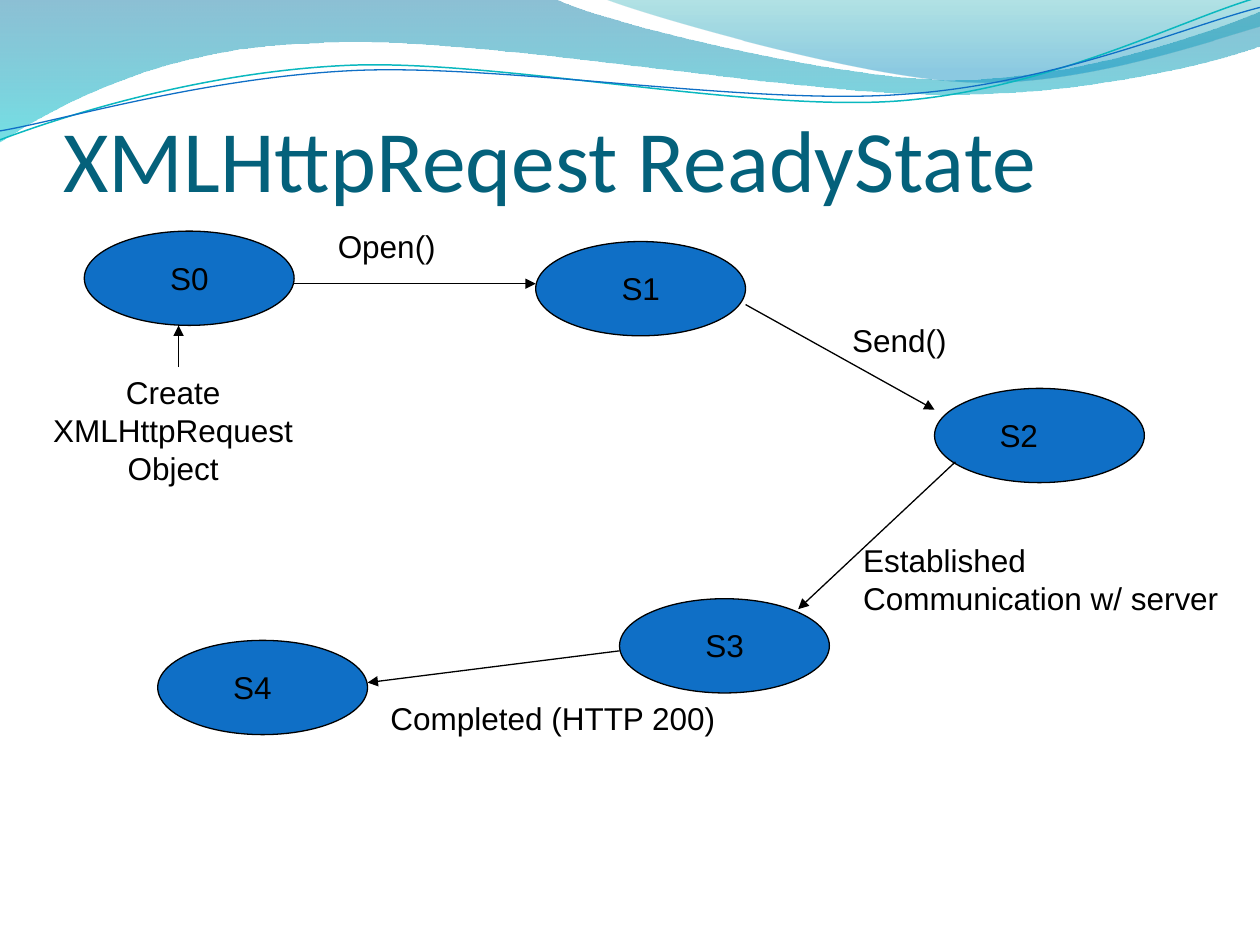
"""Build the XMLHttpRequest ready state diagram slide."""
from lxml.etree import SubElement as Sub
from pptx import Presentation as Deck
from pptx.dml.color import RGBColor as Rgb
from pptx.enum.shapes import MSO_CONNECTOR as Link, MSO_SHAPE as Kind
from pptx.enum.text import MSO_ANCHOR as Anchor, MSO_AUTO_SIZE as Fit, PP_ALIGN as Align
from pptx.oxml.ns import qn
from pptx.util import Cm, Pt

INK = {"blue": "0F6FC6", "teal": "0AB8BF", "title": "04617B", "black": "000000"}
BODY = {"name": "Arial", "size": Pt(18)}
HEAD = {"name": "Calibri", "size": Pt(50)}
FLUSH = {"margin_left": 0, "margin_right": 0, "margin_bottom": 0}
GROW = {"auto_size": Fit.SHAPE_TO_FIT_TEXT}
OVAL = (4.23, 1.9)
TILT = -2.7

BANDS = [
    ([(0, "0074A1", 45), (1, "00C6CF", 55)],
     [(0, 0), (11.18, -0.03),
      (12.09, 0.43, 16.87, 1.6, 19.25, 1.6), (21.67, 1.6, 24.33, 0.66, 25.4, 0.23),
      (25.43, 0.91),
      (24.97, 1.12, 22.1, 1.93, 18.95, 1.9), (15.8, 1.9, 9.7, 0.71, 6.53, 0.86),
      (3.28, 0.91, 1.17, 2.11, -0.03, 2.87), (0, 0)]),
    ([(0, "00A1A9", 30), (0.8, "008BBF", 45)],
     [(12.17, -0.03), (12.93, 0.28, 17.32, 1.57, 19.53, 1.65),
      (21.74, 1.75, 24.41, 0.81, 25.4, 0.53), (25.4, 0), (12.17, -0.03)]),
]
CURVES = [
    ("teal", 0.85,
     [(-0.05, 2.22), (1.19, 1.82, 4.02, 1.04, 7.05, 1.05),
      (10.05, 1.07, 15.02, 2.37, 18.08, 2.29), (21.13, 2.2, 23.87, 0.91, 25.41, 0.55)]),
    ("blue", 0.75,
     [(-0.04, 2.04), (1.16, 1.9, 4.18, 1.15, 7.2, 1.16),
      (10.25, 1.18, 15.13, 2.25, 18.19, 2.16), (21.21, 2.1, 23.93, 1.06, 25.45, 0.75)]),
]
STATES = [
    ("S0", 1.7, 4.66, 1.48), ("S1", 10.8, 4.87, 1.48), ("S2", 18.84, 7.83, 1.06),
    ("S3", 12.49, 12.07, 1.48), ("S4", 3.18, 12.91, 1.27),
]
ARROWS = [
    (5.93, 5.72, 10.8, 5.72), (15.03, 6.14, 18.84, 8.26), (19.26, 9.31, 16.09, 12.28),
    (12.49, 13.12, 7.41, 13.76), (3.6, 7.4, 3.6, 6.56),
]
LABELS = [
    ("Create XMLHttpRequest Object", (0.63, 7.4, 5.72, 2.54), Align.CENTER, True),
    ("Open()", (6.56, 4.45, 5.93, 1.02), Align.LEFT, True),
    ("Send()", (16.93, 6.35, 5.93, 1.02), Align.LEFT, True),
    ("Established Communication w/ server", (17.15, 10.79, 8.26, 1.78), Align.LEFT, True),
    ("Completed (HTTP 200)", (7.62, 13.97, 7.09, 1.02), Align.LEFT, False),
]


def cms(nums):
    return [Cm(n) for n in nums]


def apply(item, vals):
    for key, val in vals.items():
        setattr(item, key, val)


def pen(line, ink, width=0.75):
    line.color.rgb = Rgb.from_string(INK[ink])
    line.width = Pt(width)


def outline(shapes, route, close):
    pts = [cms(leg[i:i + 2]) for leg in route for i in range(0, len(leg), 2)]
    draft = shapes.build_freeform(*pts[0])
    draft.add_line_segments(pts[1:], close=close)
    form = draft.convert_to_shape()
    form.shadow.inherit = False
    lines = iter(form._element.spPr.findall(".//" + qn("a:lnTo")))
    for leg in route[1:]:
        first = next(lines)
        if len(leg) == 6:
            first.tag = qn("a:cubicBezTo")
            for _ in range(2):
                extra = next(lines)
                first.append(extra[0])
                extra.getparent().remove(extra)
    return form


def band(shapes, stops, route):
    form = outline(shapes, route, True)
    form.line.fill.background()
    form.fill.gradient()
    form.fill.gradient_angle = 270
    for stop, (pos, ink, _) in zip(form.fill.gradient_stops, stops):
        stop.position = pos
        stop.color.rgb = Rgb.from_string(ink)
    tones = form._element.spPr.findall(".//" + qn("a:srgbClr"))
    for tone, (_, _, alpha) in zip(tones, stops):
        Sub(tone, qn("a:alpha"), val=str(alpha * 1000))


def curve(shapes, ink, width, route):
    form = outline(shapes, route, False)
    form.rotation = TILT
    form.fill.background()
    pen(form.line, ink, width)


def write(shapes, text, spot, font, ink="black", align=Align.LEFT, **frame):
    area = shapes.add_textbox(*cms(spot)).text_frame
    apply(area, {"word_wrap": True, **frame})
    para = area.paragraphs[0]
    para.alignment = align
    run = para.add_run()
    run.text = text
    apply(run.font, font)
    run.font.color.rgb = Rgb.from_string(INK[ink])


def oval(shapes, x, y):
    form = shapes.add_shape(Kind.OVAL, *cms((x, y, *OVAL)))
    form.shadow.inherit = False
    form.fill.solid()
    form.fill.fore_color.rgb = Rgb.from_string(INK["blue"])
    pen(form.line, "black")


def arrow(shapes, ends):
    link = shapes.add_connector(Link.STRAIGHT, *cms(ends))
    pen(link.line, "black")
    props = link._element.spPr
    Sub(props.find(qn("a:ln")), qn("a:tailEnd"), type="triangle")
    Sub(props, qn("a:effectLst"))


def main():
    deck = Deck()
    deck.slide_width, deck.slide_height = cms((25.4, 19.05))
    shapes = deck.slides.add_slide(deck.slide_layouts[6]).shapes
    for stops, route in BANDS:
        band(shapes, stops, route)
    for ink, width, route in CURVES:
        curve(shapes, ink, width, route)
    write(shapes, "XMLHttpReqest ReadyState", (1.28, 1.95, 22.86, 2.29), HEAD, "title",
          vertical_anchor=Anchor.BOTTOM, **FLUSH)
    for _, x, y, _ in STATES:
        oval(shapes, x, y)
    for ends in ARROWS:
        arrow(shapes, ends)
    for name, x, y, inset in STATES:
        write(shapes, name, (x + inset, y + 0.43, 2.12, 1.02), BODY, **GROW)
    for text, spot, align, wrap in LABELS:
        write(shapes, text, spot, BODY, align=align, word_wrap=wrap, **GROW)
    deck.save("out.pptx")


if __name__ == "__main__":
    main()
